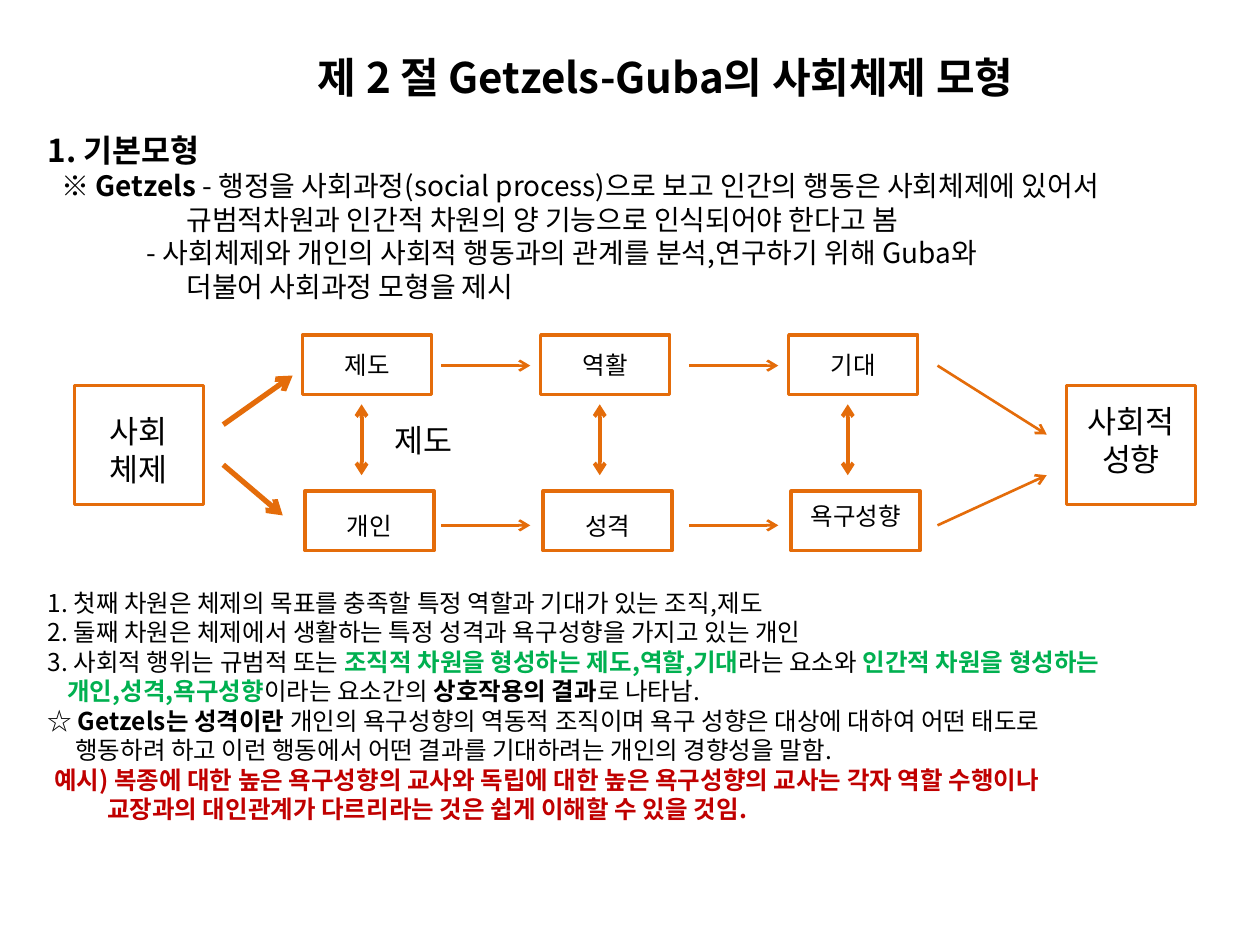
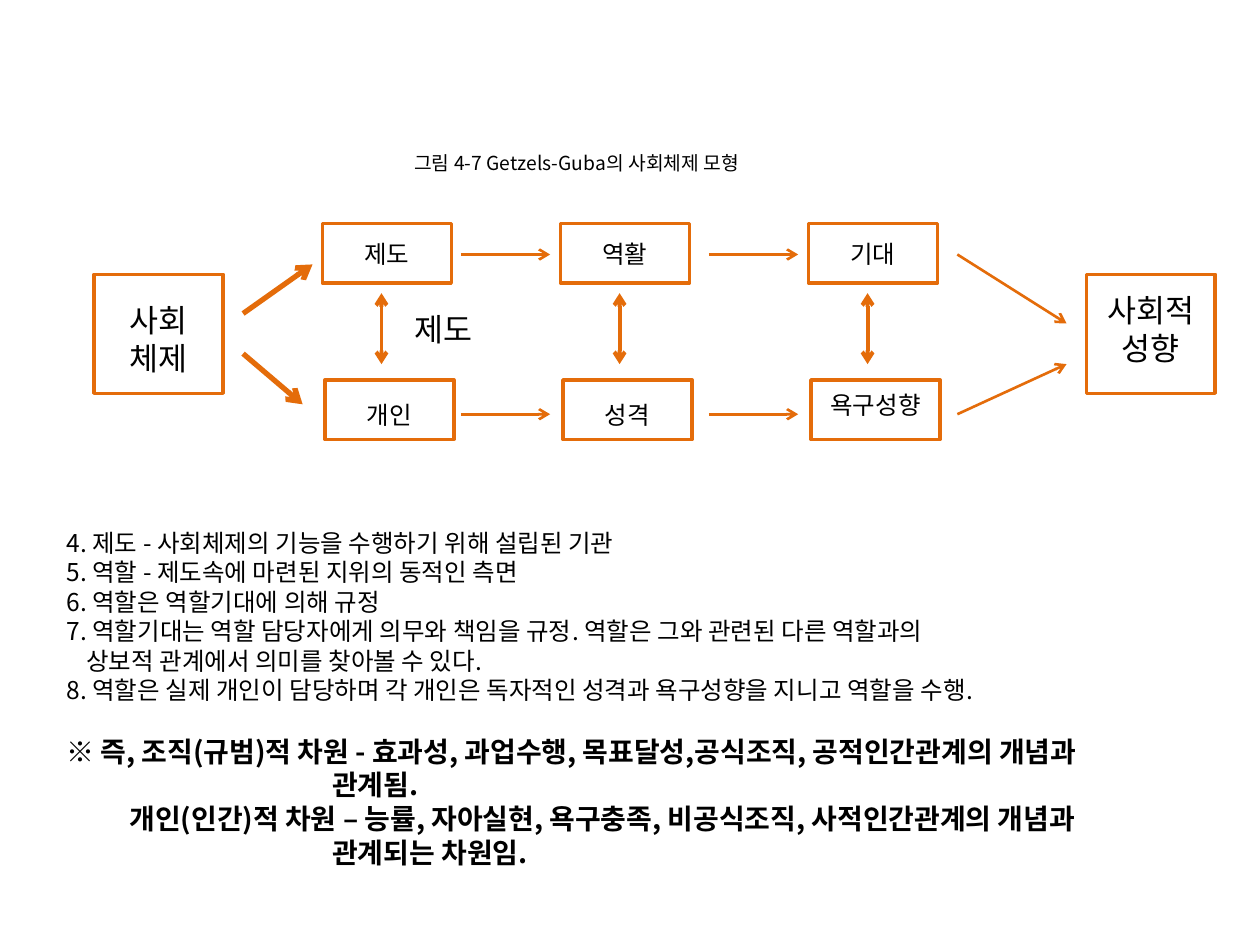
from lxml import etree
from pptx import Presentation
from pptx.dml.color import RGBColor
from pptx.enum import shapes, text
from pptx.oxml.ns import qn
from pptx.util import Cm, Pt

FONT = "Noto Sans CJK KR"
COLORS = {"text": "000000", "line": "E46C0A", "green": "00B050", "red": "C00000"}
LINE_HEIGHT = 1.2

# Run styles: colour name, bold
PLAIN = ("text", False)
BOLD = ("text", True)
GREEN = ("green", True)
RED = ("red", True)

# Model grid on the first slide, in cm
COLUMNS = (6.1, 10.9, 15.9)
ROWS = (6.75, 9.9)
ARROW_ROWS = (7.37, 10.59)
BOX_SIZE = (2.6, 1.2)
SIDE_SIZE = (2.6, 2.4)
SIDE_TOP = 7.77
# Rows of box labels, each with how far it sits below the box centre
LABELS = (
    (("제도", 0), ("역활", 0), ("기대", 0)),
    (("개인", 0.1), ("성격", 0.1), ("욕구성향", -0.1)),
)

# Paragraphs: size, indent in cm, runs
INTRODUCTION = (
    (18, 0, [("1. 기본모형", BOLD)]),
    (16, 0.28, [("※ Getzels ", BOLD),
                ("- 행정을 사회과정(social process)으로 보고 인간의 행동은 사회체제에 있어서", PLAIN)]),
    (16, 2.8, [("규범적차원과 인간적 차원의 양 기능으로 인식되어야 한다고 봄", PLAIN)]),
    (16, 2, [("- 사회체제와 개인의 사회적 행동과의 관계를 분석,연구하기 위해 Guba와", PLAIN)]),
    (16, 2.8, [("더불어 사회과정 모형을 제시", PLAIN)]),
)
DIMENSIONS = (
    (14, 0, [("1. 첫째 차원은 체제의 목표를 충족할 특정 역할과 기대가 있는 조직,제도", PLAIN)]),
    (14, 0, [("2. 둘째 차원은 체제에서 생활하는 특정 성격과 욕구성향을 가지고 있는 개인", PLAIN)]),
    (14, 0, [("3. 사회적 행위는 규범적 또는 ", PLAIN),
             ("조직적 차원을 형성하는 제도,역할,기대", GREEN),
             ("라는 요소와 ", PLAIN), ("인간적 차원을 형성하는", GREEN)]),
    (14, 0.4, [("개인,성격,욕구성향", GREEN), ("이라는 요소간의 ", PLAIN),
               ("상호작용의 결과", BOLD), ("로 나타남.", PLAIN)]),
    (14, 0, [("☆ ", PLAIN), ("Getzels는 성격이란 ", BOLD),
             ("개인의 욕구성향의 역동적 조직이며 욕구 성향은 대상에 대하여 어떤 태도로", PLAIN)]),
    (14, 0.56, [("행동하려 하고 이런 행동에서 어떤 결과를 기대하려는 개인의 경향성을 말함.", PLAIN)]),
    (14, 0.13, [("예시) 복종에 대한 높은 욕구성향의 교사와 독립에 대한 높은 욕구성향의 교사는 "
                 "각자 역할 수행이나", RED)]),
    (14, 1.2, [("교장과의 대인관계가 다르리라는 것은 쉽게 이해할 수 있을 것임.", RED)]),
)
ROLES = (
    (14, 0, [("4. 제도 - 사회체제의 기능을 수행하기 위해 설립된 기관", PLAIN)]),
    (14, 0, [("5. 역할 - 제도속에 마련된 지위의 동적인 측면", PLAIN)]),
    (14, 0, [("6. 역할은 역할기대에 의해 규정", PLAIN)]),
    (14, 0, [("7. 역할기대는 역할 담당자에게 의무와 책임을 규정. 역할은 그와 관련된 다른 역할과의", PLAIN)]),
    (14, 0.4, [("상보적 관계에서 의미를 찾아볼 수 있다.", PLAIN)]),
    (14, 0, [("8. 역할은 실제 개인이 담당하며 각 개인은 독자적인 성격과 욕구성향을 지니고 역할을 수행.", PLAIN)]),
)
CONCLUSION = (
    (16, 0, [("※ 즉, 조직(규범)적 차원 - 효과성, 과업수행, 목표달성,공식조직, 공적인간관계의 개념과", BOLD)]),
    (16, 5.36, [("관계됨.", BOLD)]),
    (16, 1.27, [("개인(인간)적 차원 – 능률, 자아실현, 욕구충족, 비공식조직, 사적인간관계의 개념과", BOLD)]),
    (16, 5.36, [("관계되는 차원임.", BOLD)]),
)


def color(name):
    return RGBColor.from_string(COLORS[name])


def set_style(font, style):
    color_name, font.bold = style
    font.color.rgb = color(color_name)


def write_paragraph(paragraph, size, indent, runs, align=text.PP_ALIGN.LEFT):
    paragraph.alignment = align
    paragraph.line_spacing = Pt(round(size * LINE_HEIGHT, 1))
    paragraph.font.size = Pt(size)
    paragraph.font.name = FONT
    base = runs[0][1]
    set_style(paragraph.font, base)
    properties = paragraph._p.get_or_add_pPr()
    properties.set("marL", str(Cm(indent)))
    properties.set("indent", "0")
    east_asian = etree.SubElement(properties.find(qn("a:defRPr")), qn("a:ea"))
    east_asian.set("typeface", FONT)
    for words, style in runs:
        run = paragraph.add_run()
        run.text = words
        if style != base:
            set_style(run.font, style)


def add_text(slide, left, top, width, height, paragraphs, wrap=True):
    frame = slide.shapes.add_textbox(Cm(left), Cm(top), Cm(width), Cm(height)).text_frame
    frame.word_wrap = wrap
    for index, content in enumerate(paragraphs):
        paragraph = frame.add_paragraph() if index else frame.paragraphs[0]
        write_paragraph(paragraph, *content)
    return frame


def add_box(slide, left, top, size, label, font_size, shift=0, margin=0.1):
    box = slide.shapes.add_shape(shapes.MSO_SHAPE.RECTANGLE, Cm(left), Cm(top),
                                 Cm(size[0]), Cm(size[1]))
    box.shadow.inherit = False
    box.fill.background()
    box.line.color.rgb = color("line")
    box.line.width = Pt(2)
    frame = box.text_frame
    frame.word_wrap = True
    frame.vertical_anchor = text.MSO_ANCHOR.MIDDLE
    frame.margin_left = frame.margin_right = Cm(margin)
    frame.margin_top = Cm(max(0, 2 * shift))
    frame.margin_bottom = Cm(max(0, -2 * shift))
    write_paragraph(frame.paragraphs[0], font_size, 0, [(label, PLAIN)],
                    text.PP_ALIGN.CENTER)


def add_arrow(slide, start, end, width=1.5, both_ends=False):
    arrow = slide.shapes.add_connector(shapes.MSO_CONNECTOR.STRAIGHT,
                                       Cm(start[0]), Cm(start[1]), Cm(end[0]), Cm(end[1]))
    arrow.line.color.rgb = color("line")
    arrow.line.width = Pt(width)
    line = arrow.line._get_or_add_ln()
    for tag in ("a:headEnd", "a:tailEnd") if both_ends else ("a:tailEnd",):
        etree.SubElement(line, qn(tag)).set("type", "arrow")
    etree.SubElement(arrow._element.spPr, qn("a:effectLst"))


def add_model(slide, right=0, down=0):
    def at(x, y):
        return x + right, y + down

    # Boxes
    for row, (top, labels) in enumerate(zip(ROWS, LABELS)):
        for left, (label, shift) in zip(COLUMNS, labels):
            add_box(slide, *at(left + 0.05 * row, top), BOX_SIZE, label, 14, shift)
    add_box(slide, *at(1.5, SIDE_TOP), SIDE_SIZE, "사회체제", 18, 0.1, margin=0.5)
    add_box(slide, *at(21.5, SIDE_TOP), SIDE_SIZE, "사회적 성향", 18, -0.1)
    add_text(slide, *at(7.7, 8.36), 1.8, 1.03, [(18, 0, [("제도", PLAIN)])])

    # Arrows from the system and to the outcome
    add_arrow(slide, at(4.5, 8.56), at(5.9, 7.57), 3)
    add_arrow(slide, at(4.5, 9.37), at(5.7, 10.39), 3)
    for y, end_y in zip(ARROW_ROWS, (8.76, 9.58)):
        add_arrow(slide, at(18.9, y), at(21.1, end_y))
        # Arrows along each row
        for left in COLUMNS[1:]:
            add_arrow(slide, at(left - 2.01, y), at(left - 0.21, y))

    # Arrows between the rows
    for left in COLUMNS:
        add_arrow(slide, at(left + 1.19, 8.15), at(left + 1.19, 9.58), 2.25, both_ends=True)


def add_title(slide, words):
    title = slide.shapes.title
    title.left, title.top, title.width, title.height = Cm(4.3), Cm(0.91), Cm(18.24), Cm(1.27)
    title.text_frame.vertical_anchor = text.MSO_ANCHOR.MIDDLE
    write_paragraph(title.text_frame.paragraphs[0], 24, 0, [(words, BOLD)],
                    text.PP_ALIGN.CENTER)


def main():
    presentation = Presentation()
    presentation.slide_width, presentation.slide_height = Cm(25.4), Cm(19.05)
    title_only, blank = presentation.slide_layouts[5], presentation.slide_layouts[6]

    # Slide 1: basic model
    slide = presentation.slides.add_slide(title_only)
    add_title(slide, "제 2 절 Getzels-Guba의 사회체제 모형")
    add_text(slide, 0.71, 2.51, 23.8, 3.76, INTRODUCTION)
    add_model(slide)
    add_text(slide, 0.71, 11.73, 24, 5.05, DIMENSIONS)

    # Slide 2: roles and dimensions
    slide = presentation.slides.add_slide(blank)
    add_text(slide, 8.1, 2.92, 7.57, 0.74,
             [(11, 0, [("그림 4-7 Getzels-Guba의 사회체제 모형", PLAIN)])], wrap=False)
    add_model(slide, right=0.4, down=-2.24)
    frame = add_text(slide, 1.09, 10.52, 23.19, 7.19, ROLES + CONCLUSION)
    frame.paragraphs[len(ROLES)].space_before = Pt(17)

    presentation.save("out.pptx")


if __name__ == "__main__":
    main()
